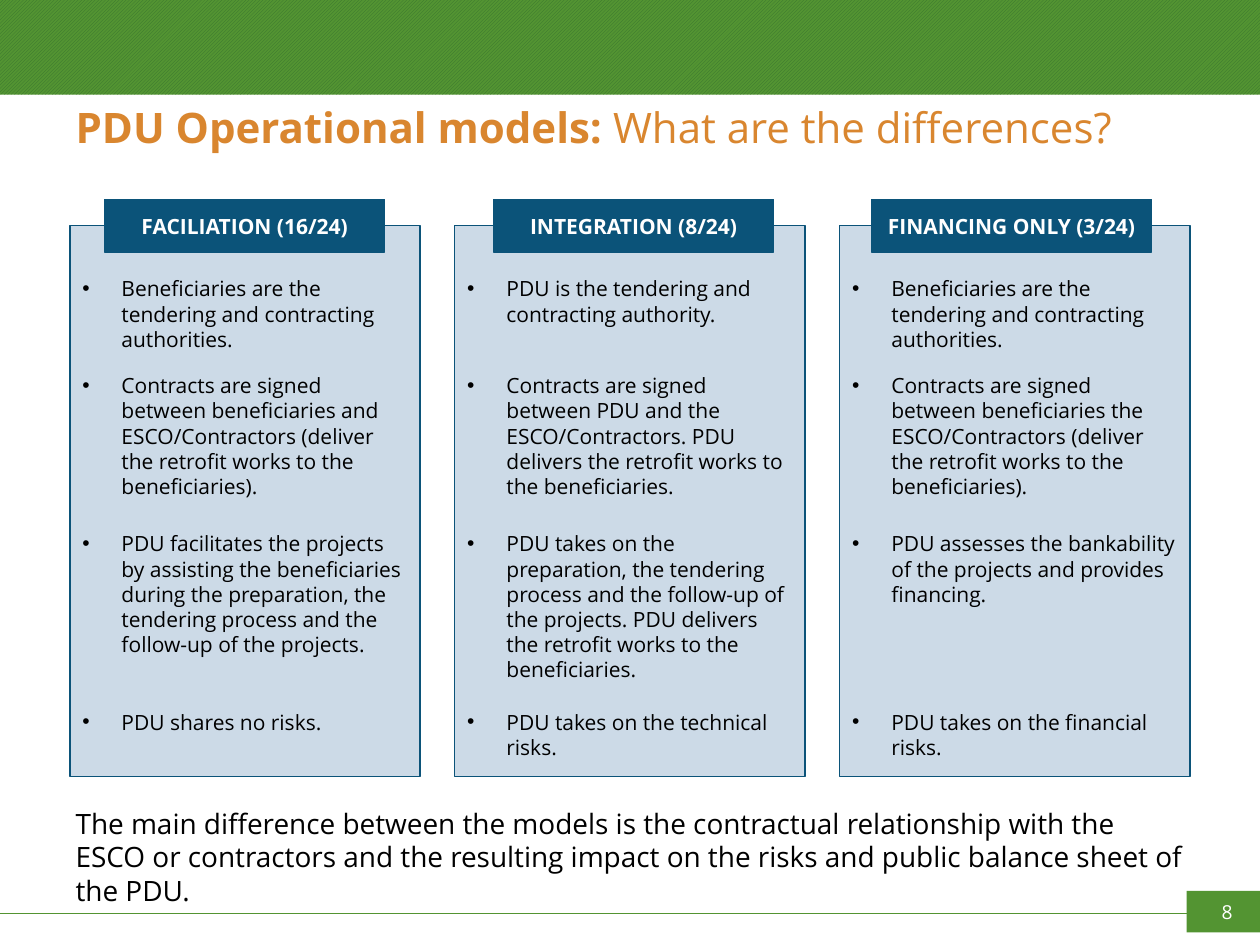
"""Build the slide comparing the three PDU operational models."""
from dataclasses import dataclass

from lxml.etree import SubElement
from pptx import Presentation
from pptx.dml.color import RGBColor
from pptx.enum.dml import MSO_PATTERN
from pptx.enum.shapes import MSO_CONNECTOR, MSO_SHAPE
from pptx.enum.text import MSO_ANCHOR, MSO_AUTO_SIZE, PP_ALIGN
from pptx.oxml.ns import qn
from pptx.shapes.autoshape import Shape
from pptx.slide import Slide
from pptx.text.text import TextFrame
from pptx.util import Cm, Pt

GREEN = RGBColor(0x53, 0x94, 0x32)
DARK_GREEN = RGBColor(0x35, 0x70, 0x2E)
NAVY = RGBColor(0x0B, 0x53, 0x79)
PALE_BLUE = RGBColor(0xCC, 0xDA, 0xE7)
ORANGE = RGBColor(0xD9, 0x86, 0x2F)
BLACK = RGBColor(0, 0, 0)
WHITE = RGBColor(0xFF, 0xFF, 0xFF)

FONT = "Open Sans"
TITLE_FORMAT = {"name": FONT, "size": Pt(24), "bold": True}
SUBTITLE_FORMAT = TITLE_FORMAT | {"bold": False}
HEADING_FORMAT = {"name": FONT, "size": Pt(12), "bold": True}
POINT_FORMAT = {"name": FONT, "size": Pt(12)}
CONCLUSION_FORMAT = {"name": FONT, "size": Pt(16)}
NUMBER_FORMAT = {"name": FONT, "size": Pt(11)}

COLUMN_LEFT, COLUMN_PITCH, COLUMN_WIDTH = 1.41, 7.76, 7.06
POINT_TOPS = (5.44, 7.39, 10.58, 14.17)
POINT_HEIGHTS = (1.27, 2.82, 2.82, 1.27)
BULLET_INDENT = Cm(0.79)


@dataclass
class Box:
    """Position and size in centimetres."""
    left: float
    top: float
    width: float
    height: float

    def lengths(self) -> tuple[Cm, Cm, Cm, Cm]:
        """Return the four measures as lengths."""
        return Cm(self.left), Cm(self.top), Cm(self.width), Cm(self.height)


@dataclass
class Model:
    """One operational model with its heading and points."""
    heading: str
    heading_left: float
    points: tuple[str, str, str, str]


MODELS = (
    Model("FACILIATION (16/24)", 2.11, (
        "Beneficiaries are the tendering and contracting authorities.",
        "Contracts are signed between beneficiaries and ESCO/Contractors "
        "(deliver the retrofit works to the beneficiaries).",
        "PDU facilitates the projects by assisting the beneficiaries during the "
        "preparation, the tendering process and the follow-up of the projects.",
        "PDU shares no risks.",
    )),
    Model("INTEGRATION (8/24)", 9.95, (
        "PDU is the tendering and contracting authority.",
        "Contracts are signed between PDU and the ESCO/Contractors. "
        "PDU delivers the retrofit works to the beneficiaries.",
        "PDU takes on the preparation, the tendering process and the follow-up "
        "of the projects. PDU delivers the retrofit works to the beneficiaries.",
        "PDU takes on the technical risks.",
    )),
    Model("FINANCING ONLY (3/24)", 17.57, (
        "Beneficiaries are the tendering and contracting authorities.",
        "Contracts are signed between beneficiaries the ESCO/Contractors "
        "(deliver the retrofit works to the beneficiaries).",
        "PDU assesses the bankability of the projects and provides financing.",
        "PDU takes on the financial risks.",
    )),
)


def write(frame: TextFrame, text: str, font_format: dict, color: RGBColor,
          alignment: PP_ALIGN = PP_ALIGN.LEFT) -> None:
    """Add a formatted run to the first paragraph of a frame."""
    frame.word_wrap = True
    paragraph = frame.paragraphs[0]
    paragraph.alignment = alignment
    paragraph.space_before = Pt(0)
    run = paragraph.add_run()
    run.text = text
    for name, value in font_format.items():
        setattr(run.font, name, value)
    run.font.color.rgb = color


def add_rectangle(slide: Slide, box: Box, fill: RGBColor,
                  outline: RGBColor | None = None) -> Shape:
    """Draw a rectangle with a plain fill and an optional outline."""
    shape = slide.shapes.add_shape(MSO_SHAPE.RECTANGLE, *box.lengths())
    shape.shadow.inherit = False
    shape.fill.solid()
    shape.fill.fore_color.rgb = fill
    if outline is None:
        shape.line.fill.background()
    else:
        shape.line.color.rgb = outline
        shape.line.width = Pt(0.75)
    return shape


def set_bullet(frame: TextFrame, indent: int, character: str | None) -> None:
    """Give the first paragraph a hanging bullet or none."""
    properties = frame.paragraphs[0]._p.get_or_add_pPr()
    properties.set("marL", str(indent))
    properties.set("indent", str(-indent))
    if character:
        SubElement(properties, qn("a:buFont"), typeface="Arial")
        SubElement(properties, qn("a:buChar"), char=character)
    else:
        SubElement(properties, qn("a:buNone"))


def place(shape: Shape, box: Box, anchor: MSO_ANCHOR) -> None:
    """Move a placeholder and fix its text layout."""
    shape.left, shape.top, shape.width, shape.height = box.lengths()
    shape.text_frame.auto_size = MSO_AUTO_SIZE.NONE
    shape.text_frame.vertical_anchor = anchor


def add_frame(slide: Slide) -> None:
    """Draw the header band, the footer line and the slide number."""
    band = add_rectangle(slide, Box(0, 0, 25.4, 1.91), GREEN)
    band.fill.patterned()
    band.fill.pattern = MSO_PATTERN.LIGHT_UPWARD_DIAGONAL
    band.fill.fore_color.rgb = DARK_GREEN
    band.fill.back_color.rgb = GREEN
    line = slide.shapes.add_connector(
        MSO_CONNECTOR.STRAIGHT, Cm(25.4), Cm(18.42), Cm(0), Cm(18.42))
    line.line.color.rgb = GREEN
    line.line.width = Pt(0.75)
    SubElement(line._element.spPr, qn("a:effectLst"))
    add_rectangle(slide, Box(23.92, 17.96, 1.48, 0.84), GREEN)
    number = slide.shapes.add_textbox(*Box(24, 18.03, 1.48, 0.81).lengths())
    write(number.text_frame, "8", NUMBER_FORMAT, WHITE, PP_ALIGN.CENTER)


def add_model(slide: Slide, model: Model, left: float) -> None:
    """Draw one model column with its heading and bulleted points."""
    add_rectangle(slide, Box(left, 4.55, COLUMN_WIDTH, 11.11), PALE_BLUE, NAVY)
    heading = add_rectangle(slide, Box(model.heading_left, 4.02, 5.65, 1.06), NAVY, NAVY)
    heading.text_frame.vertical_anchor = MSO_ANCHOR.MIDDLE
    write(heading.text_frame, model.heading, HEADING_FORMAT, WHITE, PP_ALIGN.CENTER)
    for point, top, height in zip(model.points, POINT_TOPS, POINT_HEIGHTS):
        box = Box(left, top, COLUMN_WIDTH, height)
        frame = slide.shapes.add_textbox(*box.lengths()).text_frame
        set_bullet(frame, BULLET_INDENT, "•")
        write(frame, point, POINT_FORMAT, BLACK)


def main() -> None:
    """Create and save the presentation."""
    presentation = Presentation()
    presentation.slide_width, presentation.slide_height = Cm(25.4), Cm(19.05)
    slide = presentation.slides.add_slide(presentation.slide_layouts[1])
    add_frame(slide)

    title = slide.shapes.title
    place(title, Box(1.27, 1.91, 22.86, 1.91), MSO_ANCHOR.TOP)
    write(title.text_frame, "PDU Operational models: ", TITLE_FORMAT, ORANGE)
    write(title.text_frame, "What are the differences?", SUBTITLE_FORMAT, ORANGE)

    for index, model in enumerate(MODELS):
        add_model(slide, model, COLUMN_LEFT + index * COLUMN_PITCH)

    conclusion = slide.placeholders[1]
    place(conclusion, Box(1.27, 16.31, 22.86, 1.91), MSO_ANCHOR.MIDDLE)
    set_bullet(conclusion.text_frame, 0, None)
    write(conclusion.text_frame,
          "The main difference between the models is the contractual relationship with "
          "the ESCO or contractors and the resulting impact on the risks and public "
          "balance sheet of the PDU.", CONCLUSION_FORMAT, BLACK)
    presentation.save("out.pptx")


if __name__ == "__main__":
    main()
